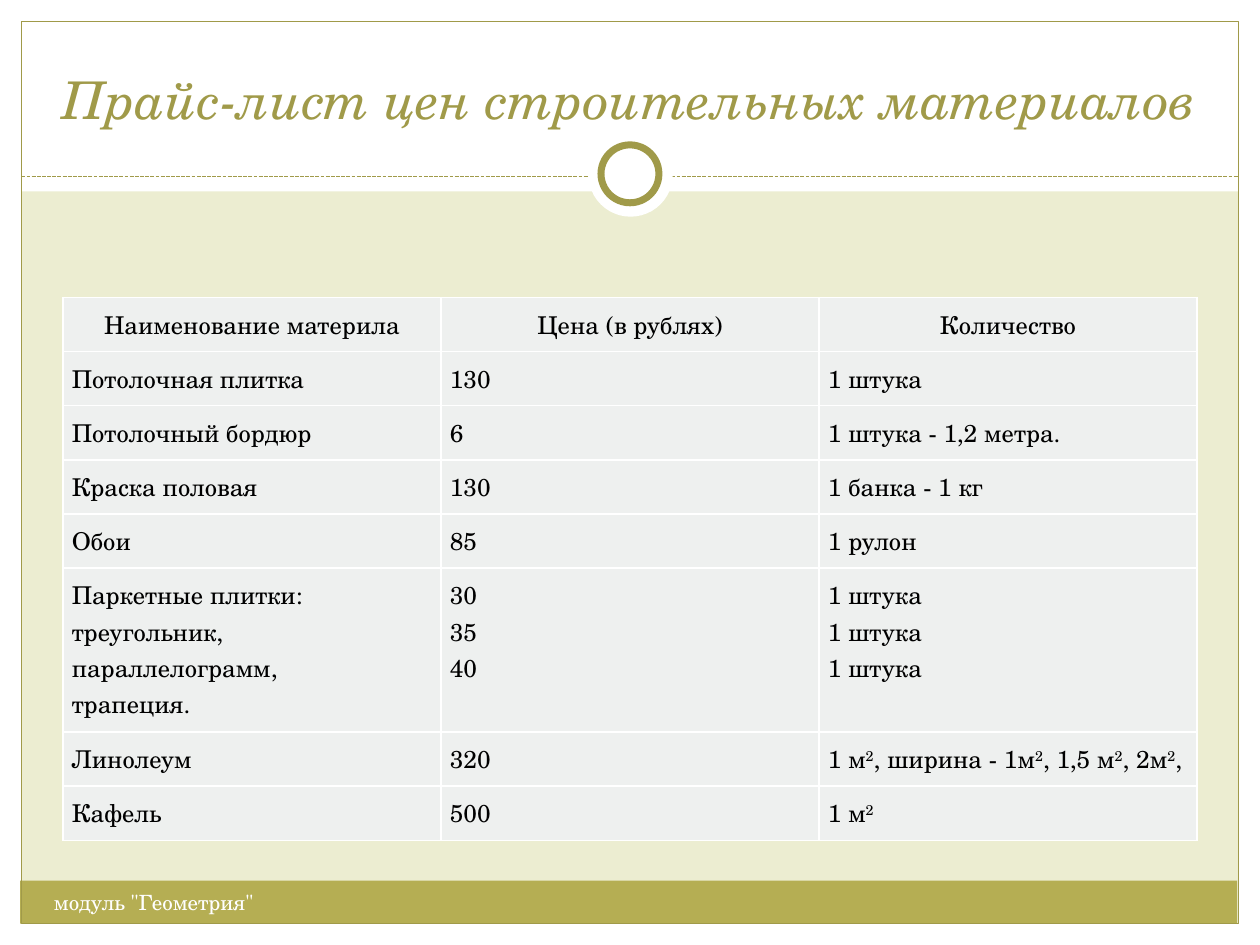
from dataclasses import dataclass
from pptx import Presentation
from pptx.dml.color import RGBColor as Rgb
from pptx.enum.dml import MSO_LINE as Dash
from pptx.enum.shapes import MSO_CONNECTOR as Link, MSO_SHAPE as Kind
from pptx.enum.text import MSO_ANCHOR as Anchor, PP_ALIGN as Align
from pptx.oxml import parse_xml
from pptx.oxml.ns import nsdecls, qn
from pptx.util import Inches, Pt

FONT = "TeX Gyre Schola"
INK = {"page": "ECEDD1", "white": "FFFFFF", "olive": "A09A49",
       "band": "B5AE53", "cell": "EEF0EF", "black": "000000"}
ROWS = [
    ("Наименование материла", "Цена (в рублях)", "Количество"),
    ("Потолочная плитка", "130", "1 штука"),
    ("Потолочный бордюр", "6", "1 штука - 1,2 метра."),
    ("Краска половая", "130", "1 банка - 1 кг"),
    ("Обои", "85", "1 рулон"),
    ("Паркетные плитки:\nтреугольник,\nпараллелограмм,\nтрапеция.",
     "30\n35\n40", "1 штука\n1 штука\n1 штука"),
    ("Линолеум", "320", "1 м^2^, ширина - 1м^2^, 1,5 м^2^, 2м^2^,"),
    ("Кафель", "500", "1 м^2^"),
]
PAD = 0.07
LEAD = 0.29


@dataclass
class Part:
    x: float
    y: float
    w: float
    h: float
    kind: Kind = Kind.RECTANGLE
    fill: str | None = "white"
    line: str | None = None
    width: float = 0.75


PARTS = [
    Part(0, 7.33, 10, 0.17),
    Part(0, 0, 10, 1.52),
    Part(0, 0, 0.17, 7.5),
    Part(9.83, 0, 0.17, 7.5),
    Part(0.16, 6.99, 9.66, 0.34, fill="band"),
    Part(0.17, 0.17, 9.66, 7.16, fill=None, line="olive"),
]
RING = [
    Part(4.67, 1.05, 0.67, 0.67, Kind.OVAL),
    Part(4.77, 1.15, 0.46, 0.46, Kind.OVAL, line="olive", width=4),
]


def color(name: str) -> Rgb:
    return Rgb.from_string(INK[name])


def write(frame, text: str, *, size: float = 14, ink: str = "black",
          italic: bool = False, align: Align = Align.LEFT) -> None:
    for row, line in enumerate(text.split("\n")):
        para = frame.add_paragraph() if row else frame.paragraphs[0]
        para.alignment = align
        for turn, bit in enumerate(line.split("^")):
            if not bit:
                continue
            run = para.add_run()
            run.text = bit
            run.font.name = FONT
            run.font.size = Pt(size)
            run.font.italic = italic
            run.font.color.rgb = color(ink)
            if turn % 2:
                run.font._element.set("baseline", "30000")


def draw(slide, part: Part) -> None:
    shape = slide.shapes.add_shape(
        part.kind, *map(Inches, (part.x, part.y, part.w, part.h)))
    shape.shadow.inherit = False
    if part.fill:
        shape.fill.solid()
        shape.fill.fore_color.rgb = color(part.fill)
    else:
        shape.fill.background()
    if part.line:
        shape.line.color.rgb = color(part.line)
        shape.line.width = Pt(part.width)
    else:
        shape.line.fill.background()


def rule(slide) -> None:
    line = slide.shapes.add_connector(
        Link.STRAIGHT, *map(Inches, (0.17, 1.4, 9.83, 1.4)))
    line.line.color.rgb = color("olive")
    line.line.width = Pt(0.75)
    line.line.dash_style = Dash.SQUARE_DOT
    line._element.spPr.append(parse_xml(f"<a:effectLst {nsdecls('a')}/>"))


def label(slide, box: tuple, text: str, anchor: Anchor, **style) -> None:
    frame = slide.shapes.add_textbox(*map(Inches, box)).text_frame
    frame.word_wrap = True
    frame.vertical_anchor = anchor
    write(frame, text, **style)


def edge(cell) -> None:
    props = cell._tc.get_or_add_tcPr()
    for side in ("lnL", "lnR", "lnT", "lnB"):
        props.append(parse_xml(
            f'<a:{side} {nsdecls("a")} w="{Pt(1)}"><a:solidFill>'
            f'<a:srgbClr val="{INK["white"]}"/></a:solidFill></a:{side}>'))


def grid(slide) -> None:
    tall = [2 * PAD + LEAD * max(text.count("\n") + 1 for text in row)
            for row in ROWS]
    table = slide.shapes.add_table(
        len(ROWS), 3, *map(Inches, (0.5, 2.36, 9, sum(tall)))).table
    table.first_row = table.horz_banding = False
    for r, row in enumerate(ROWS):
        table.rows[r].height = Inches(tall[r])
        for c, text in enumerate(row):
            cell = table.cell(r, c)
            cell.margin_left = cell.margin_right = Inches(PAD)
            cell.margin_top = cell.margin_bottom = Inches(PAD)
            edge(cell)
            cell.fill.solid()
            cell.fill.fore_color.rgb = color("cell")
            write(cell.text_frame, text,
                  align=Align.LEFT if r else Align.CENTER)


def main() -> None:
    deck = Presentation()
    deck.slide_width, deck.slide_height = Inches(10), Inches(7.5)
    slide = deck.slides.add_slide(deck.slide_layouts[6])
    slide.background.fill.solid()
    slide.background.fill.fore_color.rgb = color("page")
    for part in PARTS:
        draw(slide, part)
    rule(slide)
    for part in RING:
        draw(slide, part)
    label(slide, (0.33, 0.25, 9.33, 0.83),
          "Прайс-лист цен строительных материалов", Anchor.BOTTOM,
          size=29.7, ink="olive", italic=True, align=Align.CENTER)
    label(slide, (0.33, 7.01, 3.92, 0.4), 'модуль "Геометрия"', Anchor.TOP,
          size=12, ink="white")
    grid(slide)
    deck.save("out.pptx")


if __name__ == "__main__":
    main()
